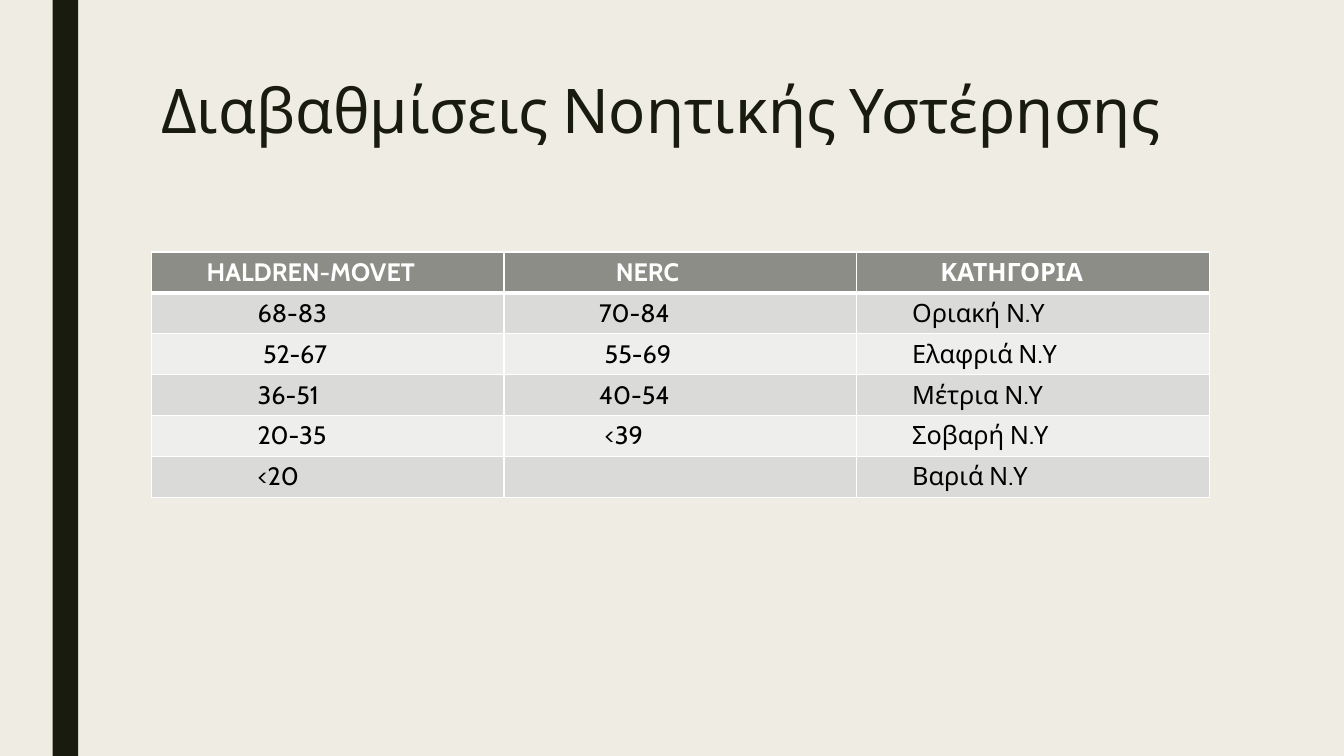
from lxml import etree
from pptx import Presentation
from pptx.dml.color import RGBColor
from pptx.enum import shapes, text
from pptx.oxml import ns
from pptx.util import Cm, Pt

TITLE = "Διαβαθμίσεις Νοητικής Υστέρησης"
ROWS = [
    ["HALDREN-MOVET", "NERC", "ΚΑΤΗΓΟΡΙΑ"],
    ["68-83", "70-84", "Οριακή Ν.Υ"],
    ["52-67", "55-69", "Ελαφριά Ν.Υ"],
    ["36-51", "40-54", "Μέτρια Ν.Υ"],
    ["20-35", "<39", "Σοβαρή Ν.Υ"],
    ["<20", "", "Βαριά Ν.Υ"],
]
HEADER_INDENTS = [1.4, 2.82, 2.11]
BODY_INDENTS = [2.68, 2.4, 1.4]
SHIFTED = {"52-67", "55-69", "<39"}
SHIFT = 0.14

FONT = "Cabin"
INK, PAPER, WHITE, BLACK = "191B0E", "EFEDE3", "FFFFFF", "000000"
HEADER_FILL, BAND_FILLS = "8C8D86", ["EEEEED", "DADBD9"]
WIDTH, HEIGHT = 33.87, 19.05
LEFT, CONTENT_WIDTH = 3.81, 26.67
TABLE_TOP, ROW_HEIGHT = 6.35, 1.03


def paint(fill, color):
    fill.solid()
    fill.fore_color.rgb = RGBColor.from_string(color)


def style(p, size, color, bold=False):
    for r in p.runs:
        r.font.name, r.font.size, r.font.bold = FONT, Pt(size), bold
        paint(r.font.fill, color)


def add_borders(cell, widths):
    tcPr = cell._tc.get_or_add_tcPr()
    for i, (side, width) in enumerate(widths.items()):
        ln = etree.Element(ns.qn("a:ln" + side), w=str(Pt(width)))
        fill = etree.SubElement(ln, ns.qn("a:solidFill"))
        etree.SubElement(fill, ns.qn("a:srgbClr"), val=WHITE)
        tcPr.insert(i, ln)


def add_title(s):
    sp = s.shapes.title
    sp.left, sp.top, sp.width, sp.height = Cm(LEFT), Cm(1.91), Cm(CONTENT_WIDTH), Cm(4.11)
    tf = sp.text_frame
    tf.text = TITLE
    tf.word_wrap = True
    tf.auto_size = text.MSO_AUTO_SIZE.NONE
    tf.vertical_anchor = text.MSO_ANCHOR.TOP
    p = tf.paragraphs[0]
    p.alignment = text.PP_ALIGN.LEFT
    p.line_spacing = 0.89
    style(p, 44, INK)


def add_grades(s):
    table = s.shapes.add_table(
        len(ROWS), len(ROWS[0]), Cm(LEFT), Cm(TABLE_TOP),
        Cm(CONTENT_WIDTH), Cm(ROW_HEIGHT * len(ROWS))).table
    for i, row in enumerate(ROWS):
        header = i == 0
        indents = HEADER_INDENTS if header else BODY_INDENTS
        for j, value in enumerate(row):
            cell = table.cell(i, j)
            cell.text = value
            cell.margin_left = Cm(indents[j] + SHIFT * (value in SHIFTED))
            paint(cell.fill, HEADER_FILL if header else BAND_FILLS[i % 2])
            style(cell.text_frame.paragraphs[0], 18, WHITE if header else BLACK, header)
            add_borders(cell, {"L": 1, "R": 1, "T": 3 if i == 1 else 1, "B": 3 if header else 1})


def main():
    prs = Presentation()
    prs.slide_width, prs.slide_height = Cm(WIDTH), Cm(HEIGHT)
    s = prs.slides.add_slide(prs.slide_layouts[5])
    paint(s.background.fill, PAPER)
    bar = s.shapes.add_shape(shapes.MSO_SHAPE.RECTANGLE, Cm(1.33), 0, Cm(0.64), Cm(HEIGHT))
    bar.shadow.inherit = False
    paint(bar.fill, INK)
    bar.line.fill.background()
    add_title(s)
    add_grades(s)
    prs.save("out.pptx")


if __name__ == "__main__":
    main()
